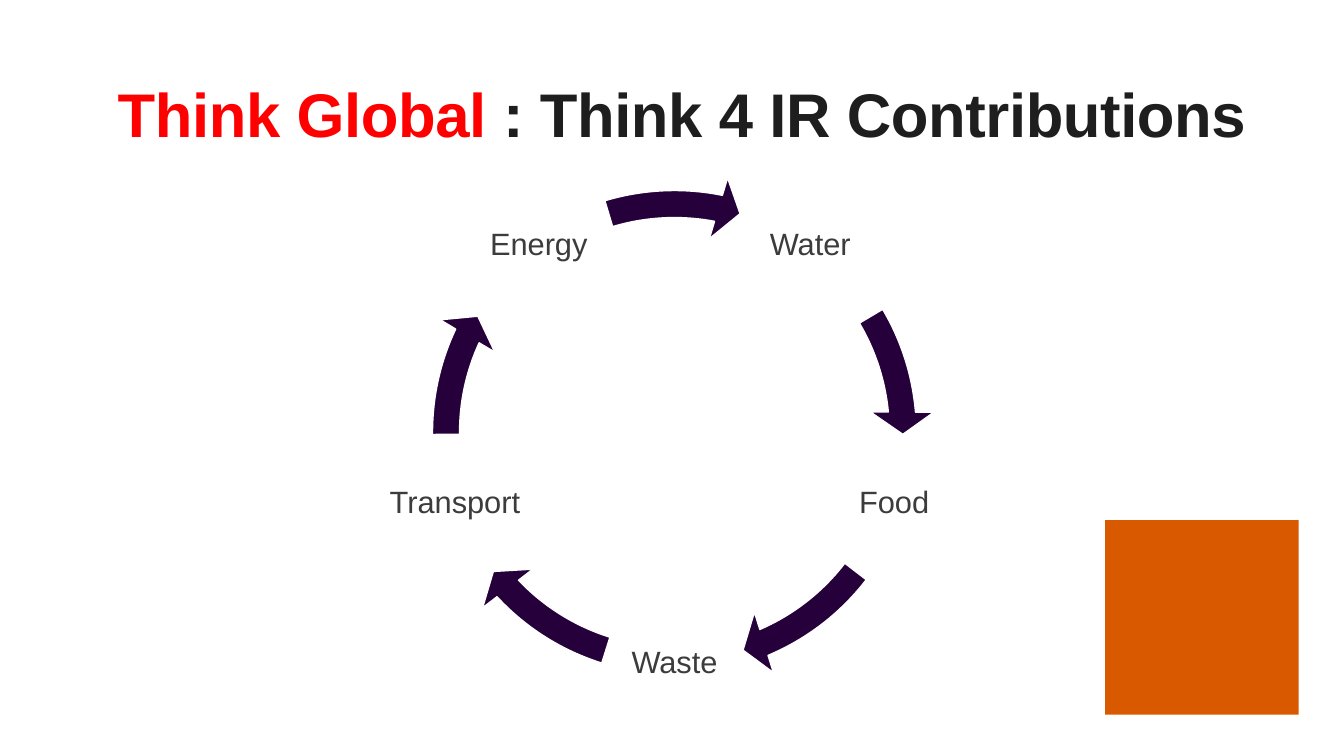
from math import cos, radians, sin
from pptx import Presentation
from pptx import util as u
from pptx.dml.color import RGBColor as Rgb
from pptx.enum import shapes, text

TITLE = [("Think Global ", "red"), (": Think 4 IR Contributions ", "dark")]
STEPS = [
    ("Water", 212.943, 197.653),
    ("Food", 40.158, 22.524),
    ("Waste", 82.12, 64.485),
    ("Transport", 122.991, 107.7),
    ("Energy", 168.668, 151.975),
]
THEME = {
    "font": "Arial", "head": 44, "label": 22,
    "red": "FF0000", "dark": "1E1E1E", "grey": "3C3C3C",
    "arrow": "26003B", "block": "D95900", "white": "FFFFFF",
}
MID_X, MID_Y = 6.69, 4.29
RADIUS, RING, BOX = 2.29, 5.16, 1.38
START, TURN = -54, 360 / len(STEPS)


def color(key):
    return Rgb.from_string(THEME[key])


def square(x, y, side):
    return [u.Inches(n) for n in (x - side / 2, y - side / 2, side, side)]


def add_text(slide, area, inset, anchor, runs, size):
    frame = slide.shapes.add_textbox(*area).text_frame
    frame.word_wrap = True
    frame.vertical_anchor = anchor
    frame.margin_left = frame.margin_right = u.Inches(inset)
    frame.margin_top = frame.margin_bottom = u.Inches(inset)
    para = frame.paragraphs[0]
    para.alignment = text.PP_ALIGN.CENTER
    para.font.name = THEME["font"]
    para.font.size = u.Pt(THEME[size])
    for words, tint in runs:
        run = para.add_run()
        run.text = words
        run.font.color.rgb = color(tint)
    return para


def add_shape(slide, kind, area, fill):
    shape = slide.shapes.add_shape(kind, *area)
    shape.shadow.inherit = False
    shape.fill.solid()
    shape.fill.fore_color.rgb = color(fill)
    shape.line.fill.background()
    return shape


def main():
    deck = Presentation()
    deck.slide_width, deck.slide_height = u.Inches(13.33), u.Inches(7.5)
    slide = deck.slides.add_slide(deck.slide_layouts[6])
    kinds = shapes.MSO_SHAPE

    block = [u.Inches(n) for n in (10.96, 5.16, 1.92, 1.93)]
    add_shape(slide, kinds.RECTANGLE, block, "block")

    area = [u.Inches(n) for n in (0.82, 0.75, 12.05, 6.34)]
    title = add_text(slide, area, 0, text.MSO_ANCHOR.TOP, TITLE, "head")
    title.font.bold = True
    for run in title.runs:
        run.font._element.set("spc", "-30")

    for i, (name, end, start) in enumerate(STEPS):
        angle = radians(START + i * TURN)
        x = MID_X + RADIUS * cos(angle)
        y = MID_Y + RADIUS * sin(angle)
        label = add_text(slide, square(x, y, BOX), 0.03,
                         text.MSO_ANCHOR.MIDDLE, [(name, "grey")], "label")
        label.line_spacing = 0.9

        arrow = add_shape(slide, kinds.CIRCULAR_ARROW,
                          square(MID_X, MID_Y, RING), "arrow")
        arrow.line.color.rgb = color("white")
        arrow.line.width = u.Pt(1)
        for k, value in enumerate((0.052, 3.356, end, start, 0.061)):
            arrow.adjustments[k] = value

    deck.save("out.pptx")


if __name__ == "__main__":
    main()
